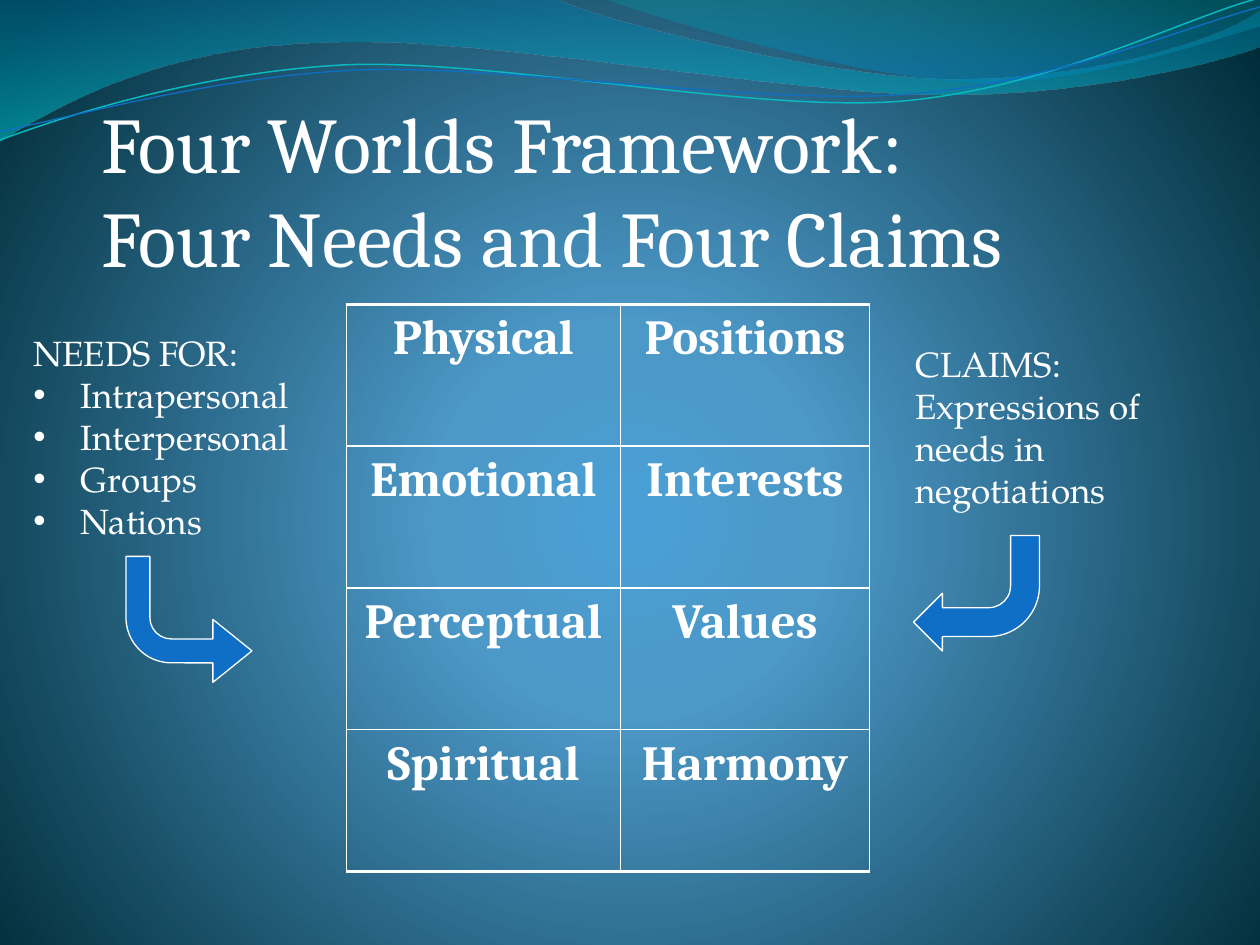
import dataclasses

import lxml.etree
import pptx
import pptx.dml.color
import pptx.enum.shapes
import pptx.enum.text
import pptx.oxml
import pptx.oxml.ns
import pptx.util

Pt = pptx.util.Pt
RGB = pptx.dml.color.RGBColor.from_string
qn = pptx.oxml.ns.qn


@dataclasses.dataclass(frozen=True)
class Theme:
    white: str = "FFFFFF"
    blue: str = "0F6FC6"
    teal: str = "0AB8BF"
    # Gradient stops: position, colour, opacity (all in percent)
    background: tuple = ((0, "4AA0D6", 100), (25, "4C98C7", 100), (100, "002C38", 100))
    wide_wave: tuple = ((0, "0074A1", 45), (100, "00C6CF", 55))
    corner_wave: tuple = ((0, "00A1A9", 30), (80, "008BBF", 45))
    heading_font: str = "Cambria"
    body_font: str = "TeX Gyre Pagella"
    title_size: int = 45
    table_size: int = 28
    body_size: int = 20


theme = Theme()


def gradient_fill(stops, direction):
    stop_xml = "".join(
        f'<a:gs pos="{position * 1000}"><a:srgbClr val="{color}">'
        f'<a:alpha val="{opacity * 1000}"/></a:srgbClr></a:gs>'
        for position, color, opacity in stops
    )
    return pptx.oxml.parse_xml(
        f'<a:gradFill {pptx.oxml.ns.nsdecls("a")} rotWithShape="1">'
        f"<a:gsLst>{stop_xml}</a:gsLst>{direction}</a:gradFill>"
    )


def add_wave(shapes, start, steps, close):
    """Draw steps of one point (a line) or three points (a Bezier curve)."""
    builder = shapes.build_freeform(Pt(start[0]), Pt(start[1]))
    ends = [(Pt(x), Pt(y)) for x, y in (step[-1] for step in steps)]
    builder.add_line_segments(ends, close=close)
    wave = builder.convert_to_shape()
    wave.shadow.inherit = False
    for segment, step in zip(list(wave.element.iter(qn("a:lnTo"))), steps):
        if len(step) == 3:
            curve = lxml.etree.Element(qn("a:cubicBezTo"))
            for x, y in step:
                point = lxml.etree.SubElement(curve, qn("a:pt"))
                point.set("x", str(Pt(x) - wave.left))
                point.set("y", str(Pt(y) - wave.top))
            segment.getparent().replace(segment, curve)
    return wave


presentation = pptx.Presentation()
presentation.slide_width, presentation.slide_height = Pt(720), Pt(540)
slide = presentation.slides.add_slide(presentation.slide_layouts[5])
shapes = slide.shapes

# Background
slide.background.fill.solid()
solid = slide.element.find(".//" + qn("p:bgPr") + "/" + qn("a:solidFill"))
solid.getparent().replace(solid, gradient_fill(
    theme.background,
    '<a:path path="circle"><a:fillToRect l="10000" t="110000" r="10000" b="100000"/></a:path>',
))

# Waves along the top
bands = [
    (theme.wide_wave, (0, 0), [
        [(317, -1)],
        [(343, 12), (478, 45), (546, 45)],
        [(614, 45), (690, 27), (720, 6)],
        [(721, 26)],
        [(708, 32), (626, 55), (537, 54)],
        [(448, 54), (275, 20), (185, 24)],
        [(93, 26), (33, 60), (-1, 81)],
        [(0, 0)],
    ]),
    (theme.corner_wave, (345, -1), [
        [(366, 8), (491, 45), (554, 47)],
        [(616, 50), (692, 23), (720, 15)],
        [(720, 0)],
        [(345, -1)],
    ]),
]
strands = [
    (theme.teal, 0.85, (0, 80), [
        [(35, 67), (114, 41), (199, 37)],
        [(284, 34), (427, 64), (513, 58)],
        [(599, 51), (675, 11), (719, -1)],
    ]),
    (theme.blue, 0.75, (0, 75), [
        [(34, 69), (118, 44), (204, 40)],
        [(290, 37), (430, 60), (516, 54)],
        [(602, 48), (678, 15), (720, 4)],
    ]),
]
waves = []
for stops, start, steps in bands:
    band = add_wave(shapes, start, steps, close=True)
    band.line.fill.background()
    band.fill.solid()
    solid = band.element.spPr.find(qn("a:solidFill"))
    band.element.spPr.replace(solid, gradient_fill(stops, '<a:lin ang="5400000" scaled="0"/>'))
    waves.append(band)
for color, width, start, steps in strands:
    strand = add_wave(shapes, start, steps, close=False)
    strand.fill.background()
    strand.line.color.rgb = RGB(color)
    strand.line.width = Pt(width)
    waves.append(strand)

# The waves belong to the slide master
master_tree = presentation.slide_master.shapes.element
for number, wave in enumerate(waves, start=101):
    wave.element.nvSpPr.cNvPr.set("id", str(number))
    master_tree.append(wave.element)

# Title
title = shapes.title
title.left, title.top, title.width, title.height = Pt(58), Pt(72), Pt(612), Pt(90)
frame = title.text_frame
frame.text = "Four Worlds Framework:\vFour Needs and Four Claims"
frame.auto_size = pptx.enum.text.MSO_AUTO_SIZE.NONE
frame.vertical_anchor = pptx.enum.text.MSO_ANCHOR.BOTTOM
frame.margin_left = frame.margin_right = frame.margin_bottom = 0
frame.margin_top = Pt(3.6)
paragraph = frame.paragraphs[0]
paragraph.alignment = pptx.enum.text.PP_ALIGN.LEFT
for run in paragraph.runs:
    run.font.name = theme.heading_font
    run.font.size = Pt(theme.title_size)
    run.font.color.rgb = RGB(theme.white)

# Table of needs and claims
rows = [
    ("Physical", "Positions"),
    ("Emotional", "Interests"),
    ("Perceptual", "Values"),
    ("Spiritual", "Harmony"),
]
table = shapes.add_table(len(rows), 2, Pt(198), Pt(174), Pt(299), Pt(324)).table
table.first_row = table.horz_banding = False
table.columns[0].width, table.columns[1].width = Pt(156.5), Pt(142.5)
for row_index, words in enumerate(rows):
    table.rows[row_index].height = Pt(81)
    for column_index, word in enumerate(words):
        cell = table.cell(row_index, column_index)
        cell.text_frame.text = word
        cell.fill.background()
        paragraph = cell.text_frame.paragraphs[0]
        paragraph.alignment = pptx.enum.text.PP_ALIGN.CENTER
        font = paragraph.runs[0].font
        font.name, font.size, font.bold = theme.heading_font, Pt(theme.table_size), True
        font.color.rgb = RGB(theme.white)
        top_width = 2.25 if row_index == 0 else 1
        bottom_width = 2.25 if row_index == len(rows) - 1 else 1
        borders = (("lnL", 1), ("lnR", 1), ("lnT", top_width), ("lnB", bottom_width))
        properties = cell._tc.get_or_add_tcPr()
        for position, (side, width) in enumerate(borders):
            properties.insert(position, pptx.oxml.parse_xml(
                f'<a:{side} {pptx.oxml.ns.nsdecls("a")} w="{Pt(width)}"><a:solidFill>'
                f'<a:srgbClr val="{theme.white}"/></a:solidFill></a:{side}>'
            ))

# Side notes: place, heading, lines below it, bulleted or not
notes = [
    ((12, 186, 168, 128), "NEEDS FOR:",
     ["Intrapersonal", "Interpersonal", "Groups", "Nations"], True),
    ((516, 192, 180, 104.5), "CLAIMS:", ["Expressions of needs in negotiations"], False),
]
for place, heading, lines, bulleted in notes:
    frame = shapes.add_textbox(*map(Pt, place)).text_frame
    frame.word_wrap = True
    frame.auto_size = pptx.enum.text.MSO_AUTO_SIZE.SHAPE_TO_FIT_TEXT
    frame.text = "\n".join([heading, *lines])
    for index, paragraph in enumerate(frame.paragraphs):
        if bulleted and index > 0:
            properties = paragraph._p.get_or_add_pPr()
            properties.set("marL", str(Pt(27)))
            properties.set("indent", str(Pt(-27)))
            lxml.etree.SubElement(properties, qn("a:buFont")).set("typeface", "Arial")
            lxml.etree.SubElement(properties, qn("a:buChar")).set("char", "•")
        font = paragraph.runs[0].font
        font.name, font.size = theme.body_font, Pt(theme.body_size)
        font.color.rgb = RGB(theme.white)

# Bent arrows from the notes to the table
arrows = [
    ((72, 318, 72, 72), (0.19, 0.25, 0.31, 0.36), "flipV", "1"),
    ((522, 306, 72, 66), (0.25, 0.25, 0.25, 0.44), "rot", "10800000"),
]
for place, adjustments, turn, amount in arrows:
    arrow = shapes.add_shape(pptx.enum.shapes.MSO_SHAPE.BENT_ARROW, *map(Pt, place))
    for index, value in enumerate(adjustments):
        arrow.adjustments[index] = value
    arrow.element.spPr.find(qn("a:xfrm")).set(turn, amount)
    arrow.shadow.inherit = False
    arrow.fill.solid()
    arrow.fill.fore_color.rgb = RGB(theme.blue)
    arrow.line.color.rgb = RGB(theme.white)
    arrow.line.width = Pt(0.75)

presentation.save("out.pptx")
